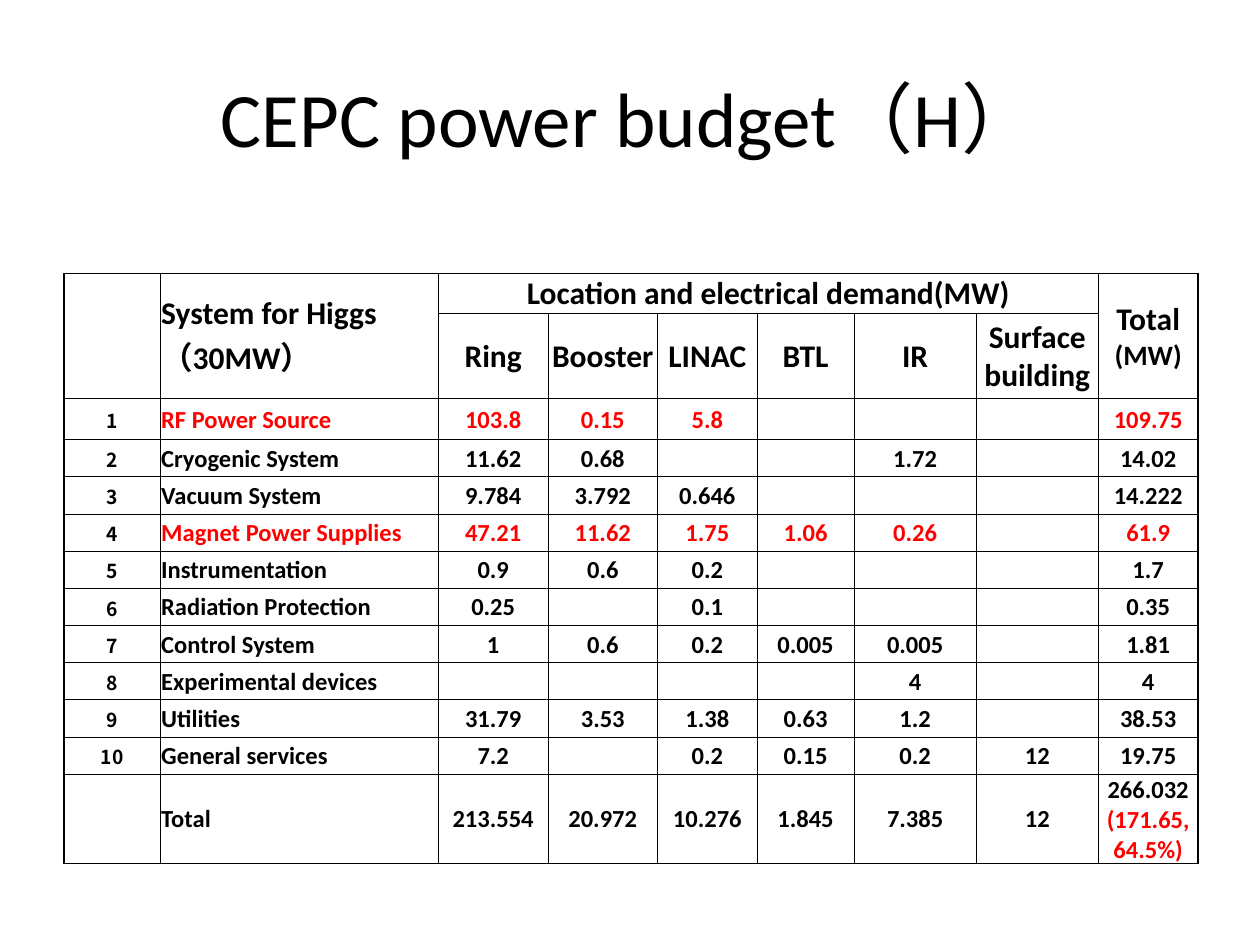
from lxml import etree
from pptx import Presentation
from pptx import util as u
from pptx.dml.color import RGBColor
from pptx.enum import text
from pptx.oxml import ns

BLACK = RGBColor(0, 0, 0)
RED = RGBColor(255, 0, 0)
WHITE = RGBColor(255, 255, 255)
LATIN = "Calibri"
CJK = "Noto Sans CJK SC"
GRID_COLS, GRID_ROWS = 100, 75

COL_WIDTHS = [7.6, 22.1, 8.7, 8.7, 7.9, 7.7, 9.7, 9.7, 7.9]
ROW_HEIGHTS = [3.2, 6.75, 3.25] + [2.95] * 9 + [7.1]
LOCATIONS = ["Ring", "Booster", "LINAC", "BTL", "IR", "Surface building"]
SYSTEMS = [
    ["RF Power Source", "103.8", "0.15", "5.8", "", "", "", "109.75"],
    ["Cryogenic System", "11.62", "0.68", "", "", "1.72", "", "14.02"],
    ["Vacuum System", "9.784", "3.792", "0.646", "", "", "", "14.222"],
    ["Magnet Power Supplies", "47.21", "11.62", "1.75", "1.06", "0.26", "", "61.9"],
    ["Instrumentation", "0.9", "0.6", "0.2", "", "", "", "1.7"],
    ["Radiation Protection", "0.25", "", "0.1", "", "", "", "0.35"],
    ["Control System", "1", "0.6", "0.2", "0.005", "0.005", "", "1.81"],
    ["Experimental devices", "", "", "", "", "4", "", "4"],
    ["Utilities", "31.79", "3.53", "1.38", "0.63", "1.2", "", "38.53"],
    ["General services", "7.2", "", "0.2", "0.15", "0.2", "12", "19.75"],
]
TOTALS = ["Total", "213.554", "20.972", "10.276", "1.845", "7.385", "12",
          "266.032\n(171.65, 64.5%)"]
HIGHLIGHTED = {"RF Power Source", "Magnet Power Supplies"}


class Deck:
    def __init__(self):
        self.prs = Presentation()
        self.prs.slide_width, self.prs.slide_height = u.Inches(10), u.Inches(7.5)
        self.s = self.prs.slides.add_slide(self.prs.slide_layouts[6])

    def x(self, cols):
        return round(self.prs.slide_width * cols / GRID_COLS)

    def y(self, rows):
        return round(self.prs.slide_height * rows / GRID_ROWS)

    def style(self, r, size, color=BLACK, bold=True, font=LATIN):
        r.font.name, r.font.size = font, u.Pt(size)
        r.font.bold, r.font.color.rgb = bold, color
        ea = etree.SubElement(r._r.get_or_add_rPr(), ns.qn("a:ea"))
        ea.set("typeface", CJK)

    def title(self, words, left, top, width, height):
        sp = self.s.shapes.add_textbox(self.x(left), self.y(top), self.x(width), self.y(height))
        tf = sp.text_frame
        tf.word_wrap = True
        tf.vertical_anchor = text.MSO_ANCHOR.MIDDLE
        tf.text = words
        p = tf.paragraphs[0]
        p.alignment = text.PP_ALIGN.CENTER
        self.style(p.runs[0], 44, bold=False)

    def table(self, left, top, widths, heights):
        frame = self.s.shapes.add_table(len(heights), len(widths), self.x(left), self.y(top),
                                        self.x(sum(widths)), self.y(sum(heights)))
        tbl = frame.table
        tbl.first_row = tbl.horz_banding = False
        for col, width in zip(tbl.columns, widths):
            col.width = self.x(width)
        for row, height in zip(tbl.rows, heights):
            row.height = self.y(height)
        last_row, last_col = len(heights) - 1, len(widths) - 1
        for i in range(last_row + 1):
            for j in range(last_col + 1):
                cell = tbl.cell(i, j)
                self.borders(cell, {"L": j == 0, "R": j == last_col,
                                    "T": i == 0, "B": i == last_row})
                cell.fill.background()
                cell.margin_left = cell.margin_right = cell.margin_top = u.Inches(0.01)
                cell.margin_bottom = 0
                cell.vertical_anchor = text.MSO_ANCHOR.MIDDLE
                end = etree.SubElement(cell.text_frame.paragraphs[0]._p, ns.qn("a:endParaRPr"))
                end.set("sz", "1100")
        return tbl

    def borders(self, cell, outer):
        tc_pr = cell._tc.get_or_add_tcPr()
        for side, heavy in outer.items():
            ln = etree.SubElement(tc_pr, ns.qn("a:ln" + side), w=str(u.Pt(1 if heavy else 0.5)))
            fill = etree.SubElement(ln, ns.qn("a:solidFill"))
            etree.SubElement(fill, ns.qn("a:srgbClr"), val=str(BLACK))

    def label(self, cell, words, size=14, centred=True, **look):
        if not words:
            return
        cell.text_frame.text = words
        for p in cell.text_frame.paragraphs:
            p.alignment = text.PP_ALIGN.CENTER if centred else text.PP_ALIGN.LEFT
            for r in p.runs:
                self.style(r, size, **look)

    def extend_label(self, cell, words, size, **look):
        r = cell.text_frame.paragraphs[0].add_run()
        r.text = words
        self.style(r, size, **look)


def main():
    deck = Deck()
    deck.title("CEPC power budget（H）", 5, 3, 90, 12.5)
    tbl = deck.table(5.1, 21.7, COL_WIDTHS, ROW_HEIGHTS)
    for first, last in [((0, 0), (1, 0)), ((0, 1), (1, 1)), ((0, 2), (0, 7)), ((0, 8), (1, 8))]:
        tbl.cell(*first).merge(tbl.cell(*last))

    system, total = tbl.cell(0, 1), tbl.cell(0, 8)
    deck.label(system, "System for Higgs ", 18, centred=False)
    for words, font in [("（", CJK), ("30MW", LATIN), ("）", CJK)]:
        deck.extend_label(system, words, 18, font=font)
    system.fill.solid()
    system.fill.fore_color.rgb = WHITE
    deck.label(tbl.cell(0, 2), "Location and electrical demand(MW)", 18)
    deck.label(total, "Total ", 18)
    deck.extend_label(total, "(MW)", 16)
    for j, location in enumerate(LOCATIONS, 2):
        deck.label(tbl.cell(1, j), location, 18)

    for i, values in enumerate(SYSTEMS + [TOTALS], 1):
        if i <= len(SYSTEMS):
            deck.label(tbl.cell(i + 1, 0), str(i), 11, font=CJK)
        color = RED if values[0] in HIGHLIGHTED else BLACK
        for j, value in enumerate(values, 1):
            deck.label(tbl.cell(i + 1, j), value, centred=j > 1, color=color)
    share = tbl.cell(len(ROW_HEIGHTS) - 1, 8).text_frame.paragraphs[1]
    share.runs[0].font.color.rgb = RED
    deck.prs.save("out.pptx")


if __name__ == "__main__":
    main()
